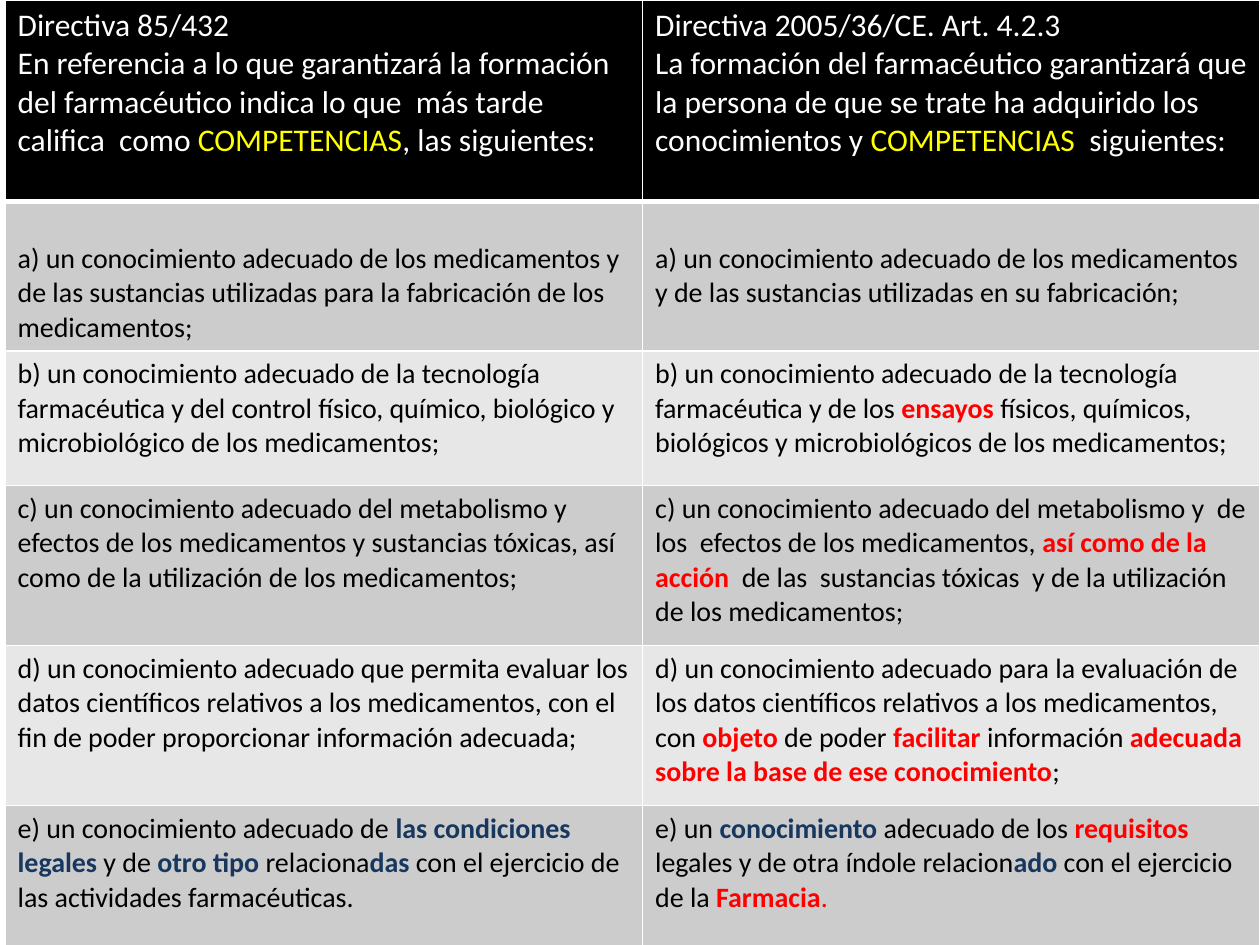
from dataclasses import dataclass

from lxml import etree
from pptx import Presentation
from pptx.dml.color import RGBColor
from pptx.oxml.ns import qn
from pptx.util import Inches, Pt


@dataclass(frozen=True)
class Theme:
    font: str = "Calibri"
    header_size: int = 18
    body_size: int = 16
    header_fill: str = "000000"
    header_text: str = "FFFFFF"
    body_text: str = "000000"
    bands: tuple = ("CCCCCC", "E7E7E7")
    border: str = "FFFFFF"
    yellow: str = "FFFF00"
    red: str = "FF0000"
    navy: str = "17375E"


THEME = Theme()
YELLOW, RED, NAVY = THEME.yellow, THEME.red, THEME.navy

SLIDE_WIDTH, SLIDE_HEIGHT = 10, 7.5
TABLE_LEFT = 0.04
COLUMN_WIDTHS = (5.06, 4.9)
ROW_HEIGHTS = (1.6, 1.17, 1.07, 1.27, 1.27, 1.27)
SIDE_MARGIN, EDGE_MARGIN = 0.1, 0.05
FIRST_ITEM_MARGIN = 0.32

HEADERS = [
    [
        ["Directiva 85/432"],
        ["En referencia a lo que garantizará la formación del farmacéutico indica lo que  más tarde califica  como ",
         ("COMPETENCIAS", YELLOW), ", las siguientes:"],
    ],
    [
        ["Directiva 2005/36/CE. Art. 4.2.3"],
        ["La formación del farmacéutico garantizará que la persona de que se trate ha adquirido los conocimientos y ",
         ("COMPETENCIAS", YELLOW), "  siguientes:"],
    ],
]

COMPETENCES = [
    (
        ["a) un conocimiento adecuado de los medicamentos y de las sustancias utilizadas "
         "para la fabricación de los medicamentos;"],
        ["a) un conocimiento adecuado de los medicamentos y de las sustancias utilizadas en su fabricación;"],
    ),
    (
        ["b) un conocimiento adecuado de la tecnología farmacéutica y del control físico, químico, "
         "biológico y microbiológico de los medicamentos;"],
        ["b) un conocimiento adecuado de la tecnología farmacéutica y de los ", ("ensayos", RED),
         " físicos, químicos, biológicos y microbiológicos de los medicamentos;"],
    ),
    (
        ["c) un conocimiento adecuado del metabolismo y efectos de los medicamentos y sustancias tóxicas, "
         "así como de la utilización de los medicamentos;"],
        ["c) un conocimiento adecuado del metabolismo y  de los  efectos de los medicamentos, ",
         ("así como de la acción  ", RED),
         "de las  sustancias tóxicas  y de la utilización de los medicamentos;"],
    ),
    (
        ["d) un conocimiento adecuado que permita evaluar los datos científicos relativos a los medicamentos, "
         "con el fin de poder proporcionar información adecuada;"],
        ["d) un conocimiento adecuado para la evaluación de los datos científicos relativos a los medicamentos, con ",
         ("objeto", RED), " de poder ", ("facilitar", RED), " información ",
         ("adecuada sobre la base de ese conocimiento", RED), ";"],
    ),
    (
        ["e) un conocimiento adecuado de ", ("las condiciones legales", NAVY), " y de ", ("otro tipo ", NAVY),
         "relaciona", ("das", NAVY), " con el ejercicio de las actividades farmacéuticas."],
        ["e) un ", ("conocimiento", NAVY), " adecuado de los ", ("requisitos", RED),
         " legales y de otra índole relacion", ("ado", NAVY), " con el ejercicio de la ",
         ("Farmacia", RED), (".", RED, False)],
    ),
]


def add_text(paragraph, text, *, size, color, bold=False):
    run = paragraph.add_run()
    run.text = text
    run.font.name = THEME.font
    run.font.size = Pt(size)
    run.font.bold = bold
    run.font.color.rgb = RGBColor.from_string(color)


def write_cell(cell, paragraphs, *, size, color, bold_accents):
    for index, pieces in enumerate(paragraphs):
        frame = cell.text_frame
        paragraph = frame.add_paragraph() if index else frame.paragraphs[0]
        for piece in pieces:
            if isinstance(piece, str):
                add_text(paragraph, piece, size=size, color=color)
            else:
                text, accent, *bold = piece
                add_text(paragraph, text, size=size, color=accent,
                         bold=bold[0] if bold else bold_accents)


def style_cell(cell, *, fill, top_margin=EDGE_MARGIN, bottom_border=1):
    cell.fill.solid()
    cell.fill.fore_color.rgb = RGBColor.from_string(fill)
    cell.margin_left = cell.margin_right = Inches(SIDE_MARGIN)
    cell.margin_top, cell.margin_bottom = Inches(top_margin), Inches(EDGE_MARGIN)
    properties = cell._tc.get_or_add_tcPr()
    for index, (side, width) in enumerate(zip("LRTB", (1, 1, 1, bottom_border))):
        line = etree.Element(qn(f"a:ln{side}"), w=str(Pt(width)))
        solid = etree.SubElement(line, qn("a:solidFill"))
        etree.SubElement(solid, qn("a:srgbClr"), val=THEME.border)
        properties.insert(index, line)


def main():
    presentation = Presentation()
    presentation.slide_width = Inches(SLIDE_WIDTH)
    presentation.slide_height = Inches(SLIDE_HEIGHT)
    slide = presentation.slides.add_slide(presentation.slide_layouts[6])
    table = slide.shapes.add_table(
        len(ROW_HEIGHTS), len(COLUMN_WIDTHS), Inches(TABLE_LEFT), 0,
        Inches(sum(COLUMN_WIDTHS)), Inches(sum(ROW_HEIGHTS))).table
    for column, width in zip(table.columns, COLUMN_WIDTHS):
        column.width = Inches(width)
    for row, height in zip(table.rows, ROW_HEIGHTS):
        row.height = Inches(height)

    for column, paragraphs in enumerate(HEADERS):
        cell = table.cell(0, column)
        style_cell(cell, fill=THEME.header_fill, bottom_border=3)
        write_cell(cell, paragraphs, size=THEME.header_size, color=THEME.header_text, bold_accents=False)

    for index, competence in enumerate(COMPETENCES):
        for column, pieces in enumerate(competence):
            cell = table.cell(index + 1, column)
            style_cell(cell, fill=THEME.bands[index % 2],
                       top_margin=EDGE_MARGIN if index else FIRST_ITEM_MARGIN)
            write_cell(cell, [pieces], size=THEME.body_size, color=THEME.body_text, bold_accents=True)

    presentation.save("out.pptx")


if __name__ == "__main__":
    main()
